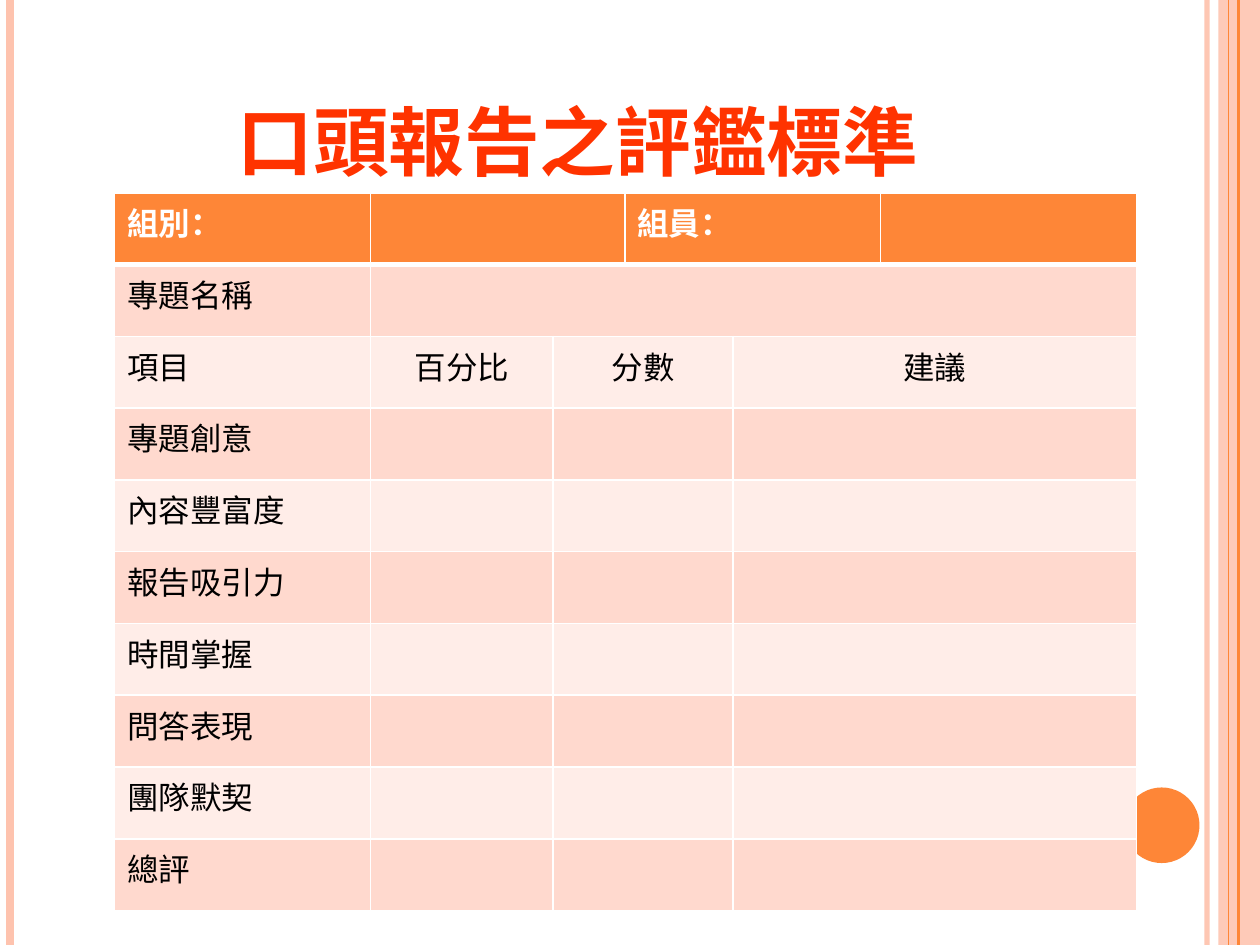
from lxml import etree
from pptx import Presentation
from pptx.dml.color import RGBColor
from pptx.enum.shapes import MSO_CONNECTOR as Connector, MSO_SHAPE as Shape
from pptx.enum.text import MSO_ANCHOR as Anchor, MSO_AUTO_SIZE as AutoSize, PP_ALIGN as Align
from pptx.oxml.ns import qn
from pptx.util import Inches, Pt

FONT = "TeX Gyre Schola"
ORANGE, PEACH, WHITE = "FE8637", "FEC3AE", "FFFFFF"


def paint(fill, color, opacity=100):
    fill.solid()
    fill.fore_color.rgb = RGBColor.from_string(color)
    if opacity < 100:
        choice = fill._xPr.find(qn("a:solidFill"))[0]
        etree.SubElement(choice, qn("a:alpha"), val=str(opacity * 1000))


def style_run(span, size, color, bold):
    span.font.name = FONT
    span.font.size = Pt(size)
    span.font.bold = bold
    span.font.color.rgb = RGBColor.from_string(color)


deck = Presentation()
deck.slide_width, deck.slide_height = Inches(10), Inches(7.5)
page = deck.slides.add_slide(deck.slide_layouts[5])
paint(page.background.fill, WHITE)

# Side band and corner dot
for kind, left, top, width, height, color, opacity in [
    (Shape.RECTANGLE, 9.67, 0, 0.33, 7.5, PEACH, 87),
    (Shape.OVAL, 8.92, 6.25, 0.6, 0.6, ORANGE, 100),
]:
    box = page.shapes.add_shape(kind, Inches(left), Inches(top), Inches(width), Inches(height))
    box.shadow.inherit = False
    paint(box.fill, color, opacity)
    box.line.fill.background()

# Vertical stripes
for x, color, weight, opacity in [
    (9.58, PEACH, 3, 93),
    (0.08, PEACH, 4.5, 100),
    (9.83, ORANGE, 1.5, 100),
    (9.75, ORANGE, 0.75, 100),
]:
    stripe = page.shapes.add_connector(Connector.STRAIGHT, Inches(x), 0, Inches(x), Inches(7.5))
    stripe.line.width = Pt(weight)
    paint(stripe.line.fill, color, opacity)
    etree.SubElement(stripe._element.spPr, qn("a:effectLst"))

# Title
title = page.shapes.title
title.left, title.top, title.width, title.height = map(Inches, (0.5, 0.3, 8.17, 1.25))
frame = title.text_frame
frame.text = "口頭報告之評鑑標準"
frame.auto_size = AutoSize.NONE
frame.word_wrap = True
frame.vertical_anchor = Anchor.BOTTOM
para = frame.paragraphs[0]
para.alignment = Align.CENTER
style_run(para.runs[0], 54, "FF3300", True)
para.runs[0]._r.get_or_add_rPr().set("cap", "small")

# Table grid
criteria = ["專題創意", "內容豐富度", "報告吸引力", "時間掌握", "問答表現", "團隊默契", "總評"]
rows = [
    {0: "組別：", 3: "組員："},
    {0: "專題名稱"},
    {0: "項目", 1: "百分比", 2: "分數", 4: "建議"},
] + [{0: name} for name in criteria]
widths = [2.03, 1.45, 0.57, 0.86, 1.17, 2.03]
table = page.shapes.add_table(
    len(rows), len(widths), Inches(0.91), Inches(1.53), Inches(8.11), Inches(5.69)
).table
for column, width in zip(table.columns, widths):
    column.width = Inches(width)
for row in table.rows:
    row.height = Inches(0.57)

# Merged cells: first and last column of each span
for r in range(len(rows)):
    spans = {0: [(1, 2), (3, 4)], 1: [(1, 5)]}.get(r, [(2, 3), (4, 5)])
    for first, last in spans:
        table.cell(r, first).merge(table.cell(r, last))

# Cell borders, fills and wording
for r, labels in enumerate(rows):
    color = ORANGE if r == 0 else ("FFD9CE" if r % 2 else "FFEDE8")
    for c in range(len(widths)):
        cell = table.cell(r, c)
        props = cell._tc.get_or_add_tcPr()
        for side in "LRTB":
            thick = (r, side) in [(0, "B"), (1, "T")]
            edge = etree.SubElement(props, qn(f"a:ln{side}"), w=str(Pt(3 if thick else 1)))
            solid = etree.SubElement(edge, qn("a:solidFill"))
            etree.SubElement(solid, qn("a:srgbClr"), val=WHITE)
        paint(cell.fill, color)
        if c in labels:
            cell.text_frame.text = labels[c]
            para = cell.text_frame.paragraphs[0]
            para.alignment = Align.CENTER if r == 2 and c > 0 else Align.LEFT
            style_run(para.runs[0], 18, WHITE if r == 0 else "000000", r == 0)

deck.save("out.pptx")
